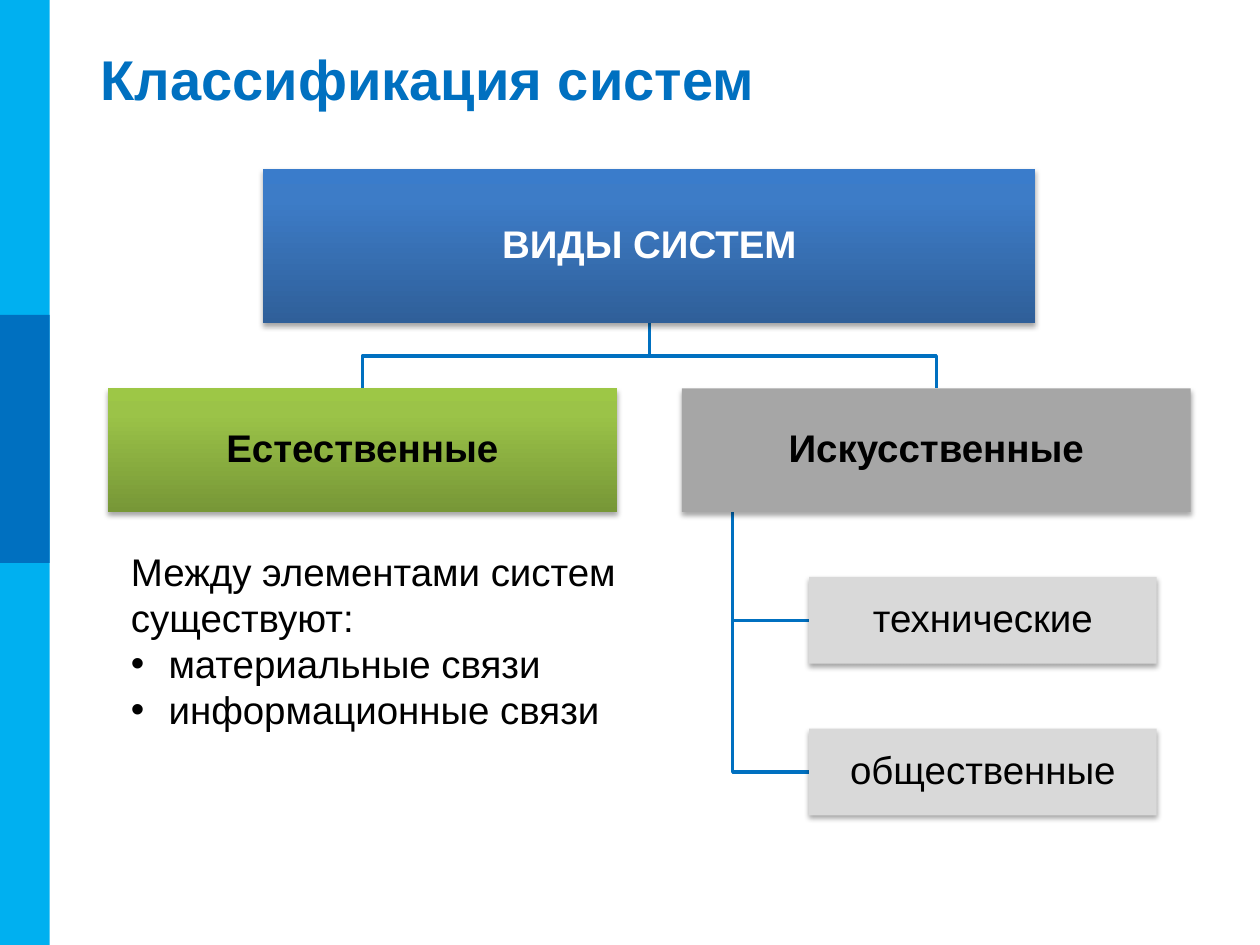
from copy import deepcopy
from lxml.etree import SubElement
from pptx import Presentation
from pptx.dml.color import RGBColor
from pptx.enum.shapes import MSO_SHAPE
from pptx.enum.text import MSO_ANCHOR, PP_ALIGN
from pptx.oxml.ns import qn
from pptx.util import Cm, Pt

# Content
TITLE = "Классификация систем"
ROOT = "ВИДЫ СИСТЕМ"
KINDS = [("Естественные", "green"), ("Искусственные", "gray")]
LEAVES = ["технические", "общественные"]
NOTE = "Между элементами систем существуют:"
LINKS = ["материальные связи", "информационные связи"]

COLORS = {"sky": "00B0F0", "blue": "0070C0", "gray": "A6A6A6",
          "pale": "D9D9D9", "white": "FFFFFF", "black": "000000"}
GRADES = {"root": ["2F5F99", "3D7CC7", "3A7CCB"],
          "green": ["779737", "9BC348", "9DC746"]}
STOPS = [0, 0.8, 1]

# Sizes in cm
MID, TOP, GAP = 13.09, 3.4, 1.31
ROOT_W, ROOT_H = 15.57, 3.12
KIND_W, KIND_H = 10.26, 2.49
LEAF_W, LEAF_H = 7.01, 1.75

deck = Presentation()
deck.slide_width, deck.slide_height = Cm(25.4), Cm(19.05)
slide = deck.slides.add_slide(deck.slide_layouts[6])
shapes = slide.shapes


def tint(name):
    return RGBColor.from_string(COLORS[name])


def style(par, size, color="black", bold=False):
    for run in par.runs:
        font = run.font
        font.name, font.size, font.bold = "Arial", Pt(size), bold
        font.color.rgb = tint(color)


def add_rect(x, y, w, h, fill):
    rect = shapes.add_shape(MSO_SHAPE.RECTANGLE, Cm(x), Cm(y), Cm(w), Cm(h))
    rect.shadow.inherit = False
    rect.line.fill.background()
    if fill in GRADES:
        rect.fill.gradient()
        rect.fill.gradient_angle = 90
        first = rect._element.spPr.find(".//" + qn("a:gs"))
        first.addnext(deepcopy(first))
        for stop, pos, code in zip(rect.fill.gradient_stops, STOPS, GRADES[fill]):
            stop.position = pos
            stop.color.rgb = RGBColor.from_string(code)
    else:
        rect.fill.solid()
        rect.fill.fore_color.rgb = tint(fill)
    return rect


def add_box(text, x, y, w, h, fill, color="black", bold=False):
    box = add_rect(x, y, w, h, fill)
    effect = box._element.spPr.find(qn("a:effectLst"))
    shade = SubElement(effect, qn("a:outerShdw"), blurRad=str(Pt(3.1)),
                       dist=str(Pt(1.8)), dir="5400000", rotWithShape="0")
    code = SubElement(shade, qn("a:srgbClr"), val=COLORS["black"])
    SubElement(code, qn("a:alpha"), val="35000")
    frame = box.text_frame
    frame.margin_left = frame.margin_right = Cm(0.05)
    frame.margin_top = frame.margin_bottom = Cm(0.05)
    frame.vertical_anchor = MSO_ANCHOR.MIDDLE
    frame.text = text
    par = frame.paragraphs[0]
    par.alignment, par.line_spacing = PP_ALIGN.CENTER, 0.9
    style(par, 22, color, bold)


def add_path(*points):
    spots = [(Cm(x), Cm(y)) for x, y in points]
    pen = shapes.build_freeform(*spots[0])
    pen.add_line_segments(spots[1:], close=False)
    path = pen.convert_to_shape()
    path.shadow.inherit = False
    path.fill.background()
    path.line.color.rgb, path.line.width = tint("blue"), Pt(2)


def add_text(x, y, w, h):
    frame = shapes.add_textbox(Cm(x), Cm(y), Cm(w), Cm(h)).text_frame
    frame.word_wrap = True
    return frame


# Side band and title
add_rect(0, 0, 1, 19.05, "sky")
add_rect(0, 6.35, 1, 5, "blue")
head = add_text(1.78, 0.76, 22.91, 1.63)
head.vertical_anchor = MSO_ANCHOR.MIDDLE
head.text = TITLE
style(head.paragraphs[0], 32, "blue", True)

# Grid of the tree
base = TOP + ROOT_H
row = base + GAP
left = MID - KIND_W - GAP / 2
cols = [left + i * (KIND_W + GAP) for i in range(len(KINDS))]
foot = row + KIND_H
trunk = cols[-1] + KIND_W / 10
leaf_x = trunk + 0.15 * KIND_W
rows = [foot + GAP + i * (LEAF_H + GAP) for i in range(len(LEAVES))]

# Branches, behind the boxes
for y in rows:
    level = y + LEAF_H / 2
    add_path((trunk, foot), (trunk, level), (leaf_x, level))
for x in cols:
    bend, mid = base + GAP / 2, x + KIND_W / 2
    add_path((MID, base), (MID, bend), (mid, bend), (mid, row))

# Boxes
add_box(ROOT, MID - ROOT_W / 2, TOP, ROOT_W, ROOT_H, "root", "white", True)
for x, (text, fill) in zip(cols, KINDS):
    add_box(text, x, row, KIND_W, KIND_H, fill, bold=True)
for y, text in zip(rows, LEAVES):
    add_box(text, leaf_x, y, LEAF_W, LEAF_H, "pale")

# Note with bullets
note = add_text(2.39, 10.92, 10.52, 4.01)
note.text = NOTE
for text in LINKS:
    par = note.add_paragraph()
    par.text = text
    props = par._p.get_or_add_pPr()
    props.set("marL", str(Cm(0.76)))
    props.set("indent", str(-Cm(0.76)))
    SubElement(props, qn("a:buFont"), typeface="Arial")
    SubElement(props, qn("a:buChar"), char="•")
for par in note.paragraphs:
    style(par, 22)

deck.save("out.pptx")
